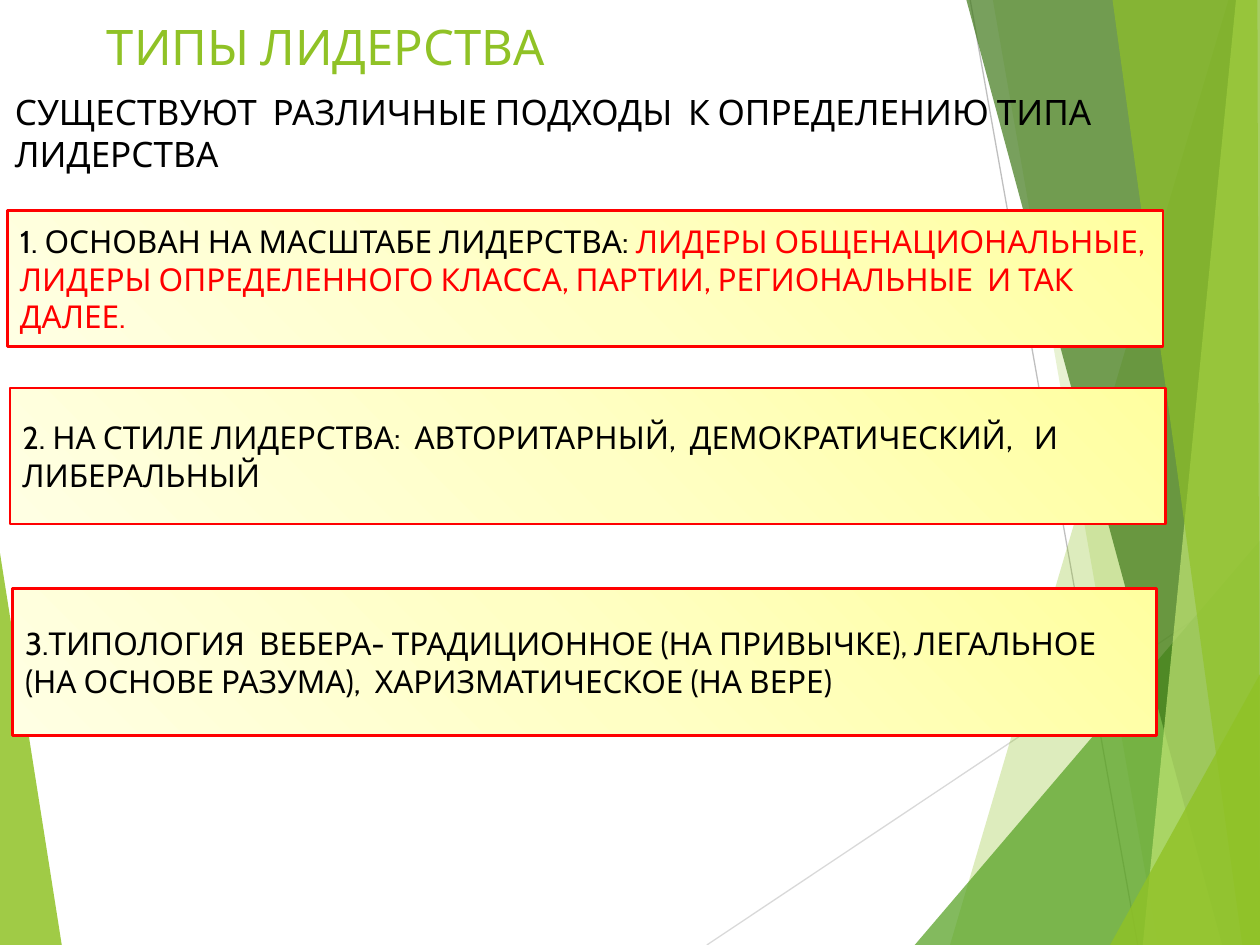
import pptx
import pptx.util
import pptx.dml.color
import pptx.enum.shapes
import pptx.enum.text
import pptx.oxml
import pptx.oxml.ns
from lxml import etree

Inches = pptx.util.Inches
FONT = "Cabin"
W, H = 10, 7.5
COLORS = {
    "green": "90C226", "leaf": "54A021", "forest": "3F7819", "lime": "C0E474",
    "light_gray": "D9D9D9", "gray": "BFBFBF", "black": "000000", "red": "FF0000",
}
CARD_GRADIENT = [(0, "FFFFA0"), (50, "FFFFC5"), (100, "FFFFE3")]

# Background decoration: colour, opacity in percent, corner points
LEFT_FACET = ("green", 85, [(0, 4.39), (0.49, H), (0, H)])
RAYS = [("light_gray", (5.61, H), (W, 4.57)), ("gray", (7.7, 0), (9.03, H))]
RIGHT_FACETS = [
    ("green", 30, [(9.75, 0), (7.54, H), (W, H), (W, 0)]),
    ("green", 20, [(7.88, 0), (9.19, H), (W, H), (W, 0)]),
    ("leaf", 72, [(7.26, H), (W, 4.29), (W, H)]),
    ("forest", 70, [(7.67, 0), (9.7, H), (W, H), (W, 0)]),
    ("lime", 70, [(9.81, 0), (9.07, H), (W, H), (W, 0)]),
    ("green", 65, [(8.83, 0), (9.86, H), (W, H), (9.98, 0)]),
    ("green", 80, [(8.81, H), (W, 5.35), (W, H)]),
]

# Text: position, size in points, runs with their colours
HEADINGS = [
    ((0.75, 0.08, 6.94, 1.44), 28, [("ТИПЫ ЛИДЕРСТВА", "green")]),
    ((0.02, 0.67, 8.92, 0.77), 20,
     [("СУЩЕСТВУЮТ  РАЗЛИЧНЫЕ ПОДХОДЫ  К ОПРЕДЕЛЕНИЮ ТИПА  ЛИДЕРСТВА", "black")]),
]
CARDS = [
    ((0.06, 1.67, 9.17, 1.08), 18, [
        ("1. ОСНОВАН НА МАСШТАБЕ ЛИДЕРСТВА: ", "black"),
        ("ЛИДЕРЫ ОБЩЕНАЦИОНАЛЬНЫЕ, ЛИДЕРЫ ОПРЕДЕЛЕННОГО КЛАССА, ПАРТИИ, "
         "РЕГИОНАЛЬНЫЕ  И ТАК ДАЛЕЕ.", "red")]),
    ((0.08, 3.08, 9.17, 1.08), 18, [
        ("2. НА СТИЛЕ ЛИДЕРСТВА:  АВТОРИТАРНЫЙ,  ДЕМОКРАТИЧЕСКИЙ,   И ЛИБЕРАЛЬНЫЙ", "black")]),
    ((0.1, 4.67, 9.08, 1.17), 18, [
        ("3.ТИПОЛОГИЯ  ВЕБЕРА- ТРАДИЦИОННОЕ (НА ПРИВЫЧКЕ), ЛЕГАЛЬНОЕ "
         "(НА ОСНОВЕ РАЗУМА),  ХАРИЗМАТИЧЕСКОЕ (НА ВЕРЕ)", "black")]),
]


def rgb(name):
    return pptx.dml.color.RGBColor.from_string(COLORS[name])


def add_facet(page, color, opacity, points):
    corners = [(Inches(x), Inches(y)) for x, y in points]
    builder = page.shapes.build_freeform(*corners[0])
    builder.add_line_segments(corners[1:], close=True)
    facet = builder.convert_to_shape()
    facet.shadow.inherit = False
    facet.line.fill.background()
    facet.fill.solid()
    facet.fill.fore_color.rgb = rgb(color)
    fill = facet._element.spPr.find(pptx.oxml.ns.qn("a:solidFill"))
    etree.SubElement(fill[0], pptx.oxml.ns.qn("a:alpha"), val=str(opacity * 1000))


def add_ray(page, color, start, end):
    ray = page.shapes.add_connector(
        pptx.enum.shapes.MSO_CONNECTOR.STRAIGHT, *map(Inches, start + end))
    ray.line.color.rgb = rgb(color)
    ray.line.width = pptx.util.Pt(0.75)
    etree.SubElement(ray._element.spPr, pptx.oxml.ns.qn("a:effectLst"))


def write(shape, size, runs, anchor):
    frame = shape.text_frame
    frame.word_wrap = True
    frame.vertical_anchor = anchor
    para = frame.paragraphs[0]
    para.alignment = pptx.enum.text.PP_ALIGN.LEFT
    for text, color in runs:
        span = para.add_run()
        span.text = text
        span.font.name = FONT
        span.font.size = pptx.util.Pt(size)
        span.font.color.rgb = rgb(color)


def fill_radial(shape):
    """Radial gradient that starts in the top right corner."""
    stops = "".join(f'<a:gs pos="{pos * 1000}"><a:srgbClr val="{color}"/></a:gs>'
                    for pos, color in CARD_GRADIENT)
    gradient = pptx.oxml.parse_xml(
        f'<a:gradFill {pptx.oxml.ns.nsdecls("a")} rotWithShape="1"><a:gsLst>{stops}</a:gsLst>'
        '<a:path path="circle"><a:fillToRect l="100000" b="100000"/></a:path></a:gradFill>')
    shape.fill.background()
    props = shape._element.spPr
    props.replace(props.find(pptx.oxml.ns.qn("a:noFill")), gradient)


def add_card(page, place, size, runs):
    card = page.shapes.add_shape(
        pptx.enum.shapes.MSO_SHAPE.RECTANGLE, *map(Inches, place))
    card.shadow.inherit = False
    fill_radial(card)
    card.line.color.rgb = rgb("red")
    card.line.width = pptx.util.Pt(1.5)
    write(card, size, runs, pptx.enum.text.MSO_ANCHOR.MIDDLE)


def main():
    deck = pptx.Presentation()
    deck.slide_width, deck.slide_height = Inches(W), Inches(H)
    page = deck.slides.add_slide(deck.slide_layouts[6])

    # Decoration
    add_facet(page, *LEFT_FACET)
    for ray in RAYS:
        add_ray(page, *ray)
    for facet in RIGHT_FACETS:
        add_facet(page, *facet)

    # Title and introduction
    for place, size, runs in HEADINGS:
        box = page.shapes.add_textbox(*map(Inches, place))
        write(box, size, runs, pptx.enum.text.MSO_ANCHOR.TOP)

    # Leadership types
    for card in CARDS:
        add_card(page, *card)

    deck.save("out.pptx")


if __name__ == "__main__":
    main()
